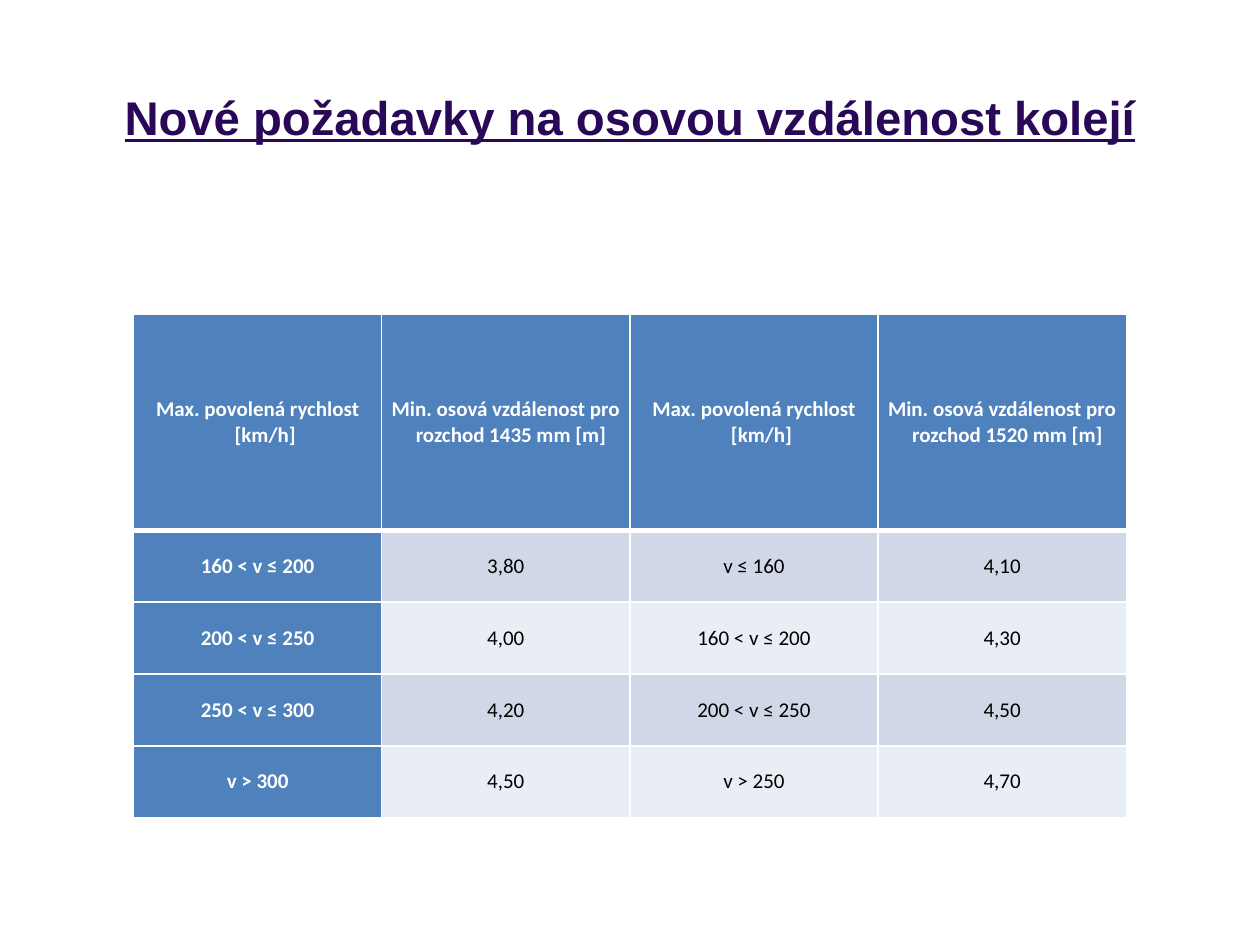
import pptx
import pptx.util
import pptx.dml.color
import pptx.enum.text
from lxml import etree

Inches = pptx.util.Inches
Pt = pptx.util.Pt
RGBColor = pptx.dml.color.RGBColor
MIDDLE = pptx.enum.text.MSO_ANCHOR.MIDDLE
CENTER = pptx.enum.text.PP_ALIGN.CENTER

HEADING = "Nové požadavky na osovou vzdálenost kolejí"
COLUMN_HEADS = [
    "Max. povolená rychlost [km/h]",
    "Min. osová vzdálenost pro rozchod 1435 mm [m] ",
    "Max. povolená rychlost [km/h]",
    "Min. osová vzdálenost pro rozchod 1520 mm [m] ",
]
SPACINGS = [
    ["160 < v ≤ 200", "3,80", "v ≤ 160", "4,10"],
    ["200 < v ≤ 250", "4,00", "160 < v ≤ 200", "4,30"],
    ["250 < v ≤ 300", "4,20", "200 < v ≤ 250", "4,50"],
    ["v > 300", "4,50", "v > 250", "4,70"],
]

PURPLE = RGBColor(0x2A, 0x08, 0x58)
BLUE = RGBColor(0x4F, 0x81, 0xBD)
BANDS = [RGBColor(0xD0, 0xD8, 0xE8), RGBColor(0xE9, 0xED, 0xF4)]
WHITE = RGBColor(0xFF, 0xFF, 0xFF)
BLACK = RGBColor(0, 0, 0)

COLUMN_WIDTH = 1.97
HEAD_HEIGHT = 1.72
ROW_HEIGHT = 0.57
A = "{http://schemas.openxmlformats.org/drawingml/2006/main}"


def write(paragraph, text, font_name, size, color, bold, underline=None):
    paragraph.alignment = CENTER
    run = paragraph.add_run()
    run.text = text
    run.font.name = font_name
    run.font.size = Pt(size)
    run.font.color.rgb = color
    run.font.bold = bold
    run.font.underline = underline


def draw_borders(cell, top, bottom):
    properties = cell._tc.get_or_add_tcPr()
    for side, width in (("L", 1), ("R", 1), ("T", top), ("B", bottom)):
        line = etree.SubElement(properties, f"{A}ln{side}", w=str(Pt(width)))
        fill = etree.SubElement(line, f"{A}solidFill")
        etree.SubElement(fill, f"{A}srgbClr", val=str(WHITE))


def fill_cell(cell, text, row, column):
    is_head = row == 0 or column == 0
    draw_borders(cell, 3 if row == 1 else 1, 3 if row == 0 else 1)
    cell.fill.solid()
    cell.fill.fore_color.rgb = BLUE if is_head else BANDS[(row - 1) % 2]
    cell.vertical_anchor = MIDDLE
    cell.margin_left = cell.margin_right = Inches(0.05)
    cell.margin_top = cell.margin_bottom = 0
    paragraph = cell.text_frame.paragraphs[0]
    indent = paragraph._p.get_or_add_pPr()
    indent.set("marL", str(Inches(0.12)))
    indent.set("indent", str(Inches(-0.12)))
    write(paragraph, text, "Calibri", 12, WHITE if is_head else BLACK, is_head)


def main():
    deck = pptx.Presentation()
    deck.slide_width, deck.slide_height = Inches(10), Inches(7.5)
    slide = deck.slides.add_slide(deck.slide_layouts[6])

    heading = slide.shapes.add_textbox(Inches(0.5), Inches(0.3), Inches(9), Inches(1.25)).text_frame
    heading.word_wrap = True
    heading.vertical_anchor = MIDDLE
    write(heading.paragraphs[0], HEADING, "Arial", 27, PURPLE, True, True)

    rows = [COLUMN_HEADS] + SPACINGS
    spacing_table = slide.shapes.add_table(
        len(rows), len(COLUMN_HEADS), Inches(1.06), Inches(2.49),
        Inches(COLUMN_WIDTH * len(COLUMN_HEADS)),
        Inches(HEAD_HEIGHT + ROW_HEIGHT * len(SPACINGS)),
    ).table
    for column in spacing_table.columns:
        column.width = Inches(COLUMN_WIDTH)
    for r, texts in enumerate(rows):
        spacing_table.rows[r].height = Inches(ROW_HEIGHT if r else HEAD_HEIGHT)
        for c, text in enumerate(texts):
            fill_cell(spacing_table.cell(r, c), text, r, c)

    deck.save("out.pptx")


if __name__ == "__main__":
    main()
